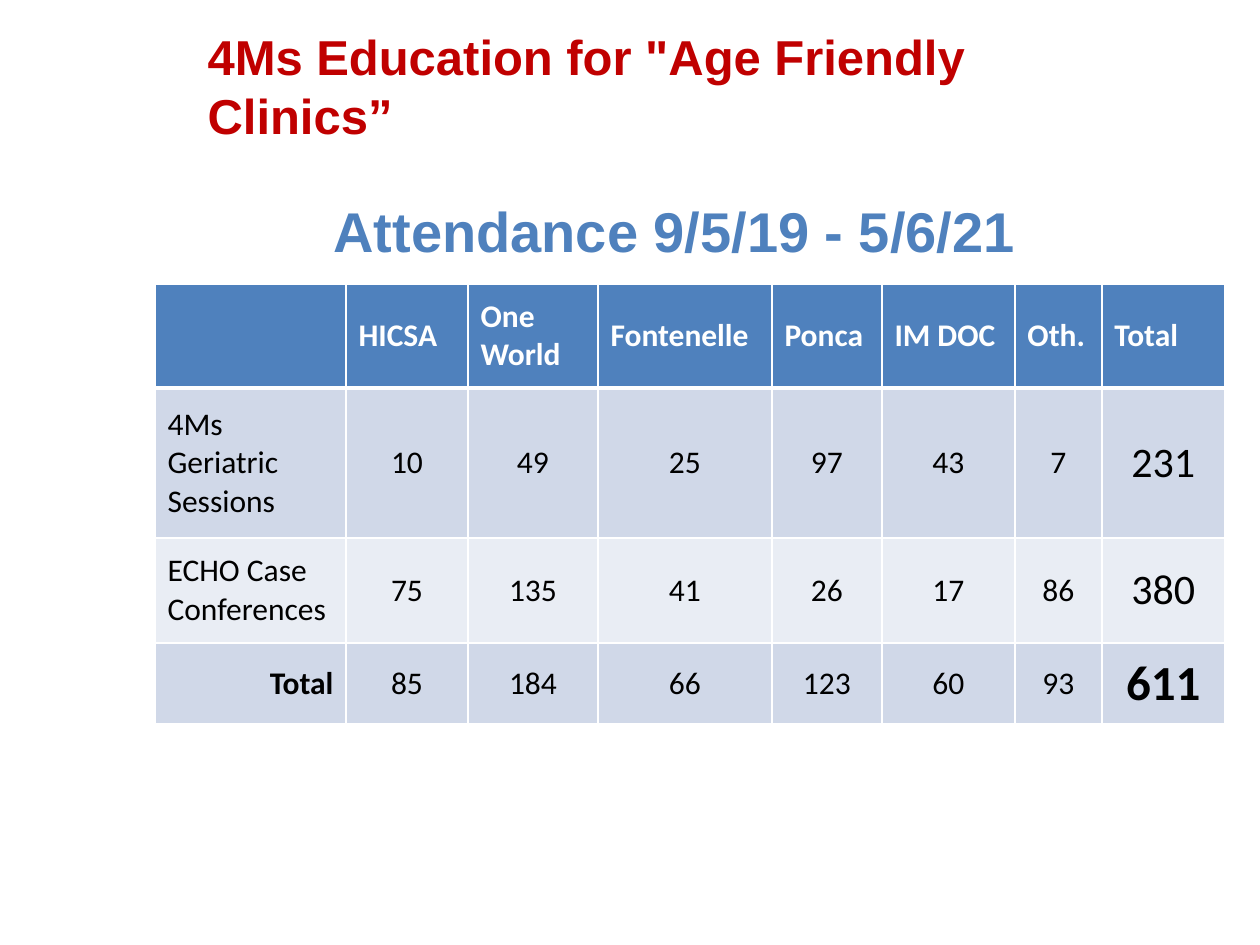
from lxml import etree
from pptx import Presentation
from pptx import util as u
from pptx.dml.color import RGBColor
from pptx.enum import text
from pptx.oxml import ns

SCALE = 914400 / 126
BLUE, RED, WHITE, BLACK = "4F81BD", "C00000", "FFFFFF", "000000"
BANDS = ["D0D8E8", "E9EDF4"]
COLUMN_WIDTHS = [191, 122, 130, 174, 110, 133, 87, 123]
ROW_HEIGHTS = [104, 150, 105, 81]
ATTENDANCE = [
    ["", "HICSA", "One World", "Fontenelle", "Ponca", "IM DOC", "Oth.", "Total"],
    ["4Ms Geriatric Sessions", "10", "49", "25", "97", "43", "7", "231"],
    ["ECHO Case Conferences", "75", "135", "41", "26", "17", "86", "380"],
    ["Total", "85", "184", "66", "123", "60", "93", "611"],
]


def px(length):
    """Turn pixels into EMU."""
    return u.Emu(round(length * SCALE))


def color(value):
    """Turn a hex string into a colour."""
    return RGBColor.from_string(value)


def style(frame, size, font, ink, bold, align=text.PP_ALIGN.LEFT):
    """Format every paragraph and run of a text frame."""
    for paragraph in frame.paragraphs:
        paragraph.alignment = align
        for run in paragraph.runs:
            run.font.size = u.Pt(size)
            run.font.name = font
            run.font.bold = bold
            run.font.color.rgb = color(ink)


def fill_heading(heading, box, wording, size, ink, anchor):
    """Place a heading and give it its wording."""
    heading.left, heading.top, heading.width, heading.height = map(px, box)
    frame = heading.text_frame
    frame.word_wrap = True
    frame.auto_size = text.MSO_AUTO_SIZE.SHAPE_TO_FIT_TEXT
    frame.vertical_anchor = anchor
    frame.text = wording
    style(frame, size, "Arial", ink, True)


def add_borders(cell, top, bottom):
    """Draw white borders, with top and bottom widths in points."""
    properties = cell._tc.get_or_add_tcPr()
    for side, width in (("L", 1), ("R", 1), ("T", top), ("B", bottom)):
        line = etree.SubElement(properties, ns.qn(f"a:ln{side}"), w=str(u.Pt(width)))
        solid = etree.SubElement(line, ns.qn("a:solidFill"))
        etree.SubElement(solid, ns.qn("a:srgbClr"), val=WHITE)


def format_cell(cell, row, column):
    """Format a cell by its place in the attendance table."""
    header, total_row = row == 0, row == len(ATTENDANCE) - 1
    total_column = column == len(COLUMN_WIDTHS) - 1
    size, align = 18, text.PP_ALIGN.LEFT
    if not header and column:
        align = text.PP_ALIGN.CENTER
        if total_column:
            size = 28 if total_row else 24
    elif total_row:
        align = text.PP_ALIGN.RIGHT
    bold = header or (total_row and (column == 0 or total_column))
    add_borders(cell, 3 if row == 1 else 1, 3 if header else 1)
    cell.fill.solid()
    cell.fill.fore_color.rgb = color(BLUE if header else BANDS[(row - 1) % 2])
    cell.vertical_anchor = text.MSO_ANCHOR.MIDDLE
    style(cell.text_frame, size, "Calibri", WHITE if header else BLACK, bold, align)


def add_attendance_table(slide, left, top):
    """Add the table of attendance by clinic."""
    table = slide.shapes.add_table(
        len(ROW_HEIGHTS), len(COLUMN_WIDTHS), px(left), px(top),
        px(sum(COLUMN_WIDTHS)), px(sum(ROW_HEIGHTS))).table
    for column, width in zip(table.columns, COLUMN_WIDTHS):
        column.width = px(width)
    for row, height in zip(table.rows, ROW_HEIGHTS):
        row.height = px(height)
    for r, record in enumerate(ATTENDANCE):
        for c, entry in enumerate(record):
            cell = table.cell(r, c)
            cell.text = entry
            format_cell(cell, r, c)


def main():
    """Build the attendance slide."""
    deck = Presentation()
    deck.slide_width, deck.slide_height = px(1260), px(945)
    slide = deck.slides.add_slide(deck.slide_layouts[5])
    fill_heading(slide.shapes.title, (195, 20, 979, 131),
                 '4Ms Education for "Age Friendly Clinics”', 28, RED,
                 text.MSO_ANCHOR.MIDDLE)
    add_attendance_table(slide, 155, 284)
    period = slide.shapes.add_textbox(0, 0, 0, 0)
    fill_heading(period, (321, 190, 766, 81), "Attendance 9/5/19 - 5/6/21",
                 32, BLUE, text.MSO_ANCHOR.TOP)
    deck.save("out.pptx")


if __name__ == "__main__":
    main()
